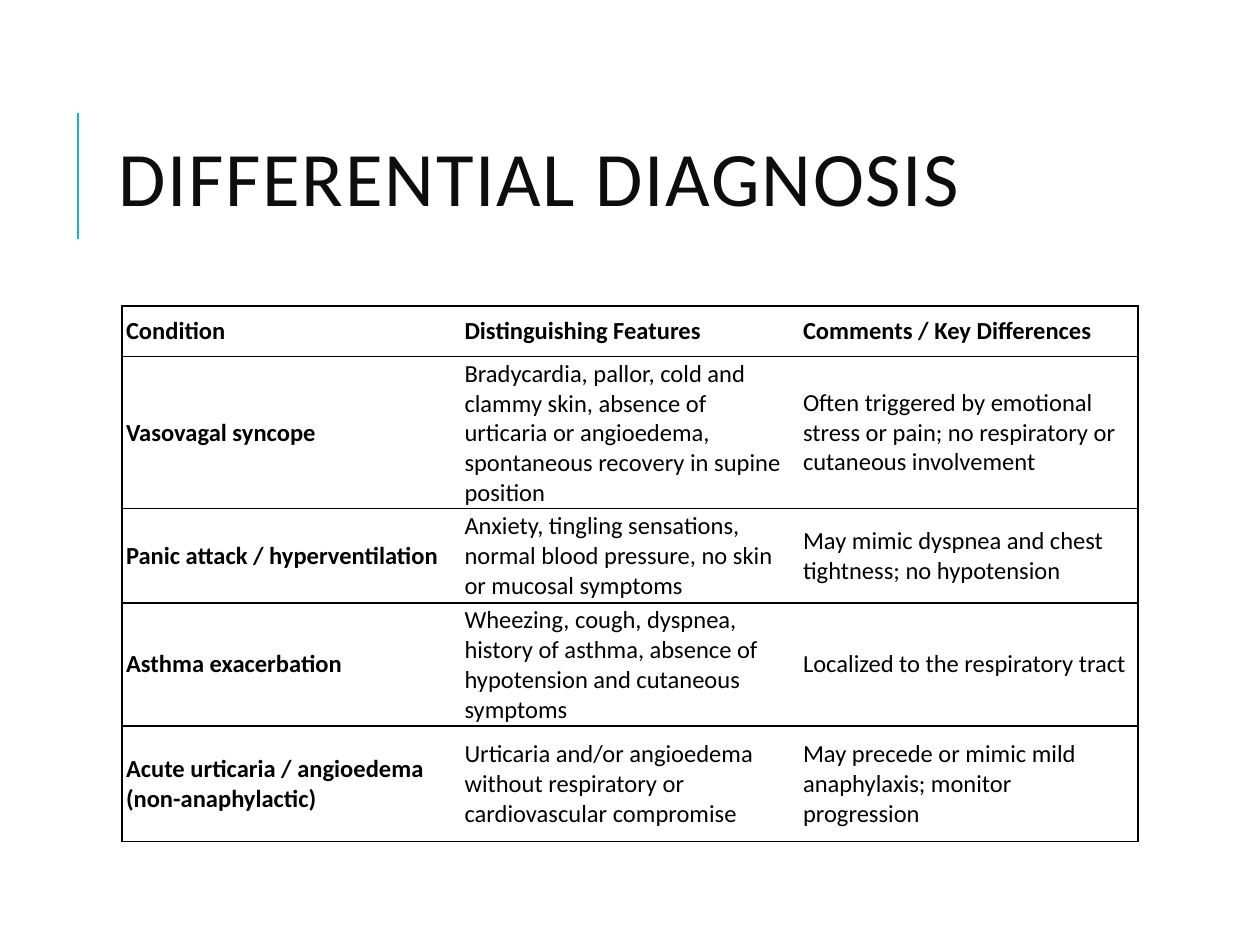
from lxml.etree import SubElement
from pptx import Presentation
from pptx.dml.color import RGBColor
from pptx.enum.shapes import MSO_CONNECTOR
from pptx.enum.text import MSO_ANCHOR
from pptx.oxml.ns import qn
from pptx.util import Inches, Pt

COLORS = {"accent": "1CADE4", "title": "0D0D0D", "ink": "000000", "paper": "FFFFFF"}
FONT = "Calibri"
ROWS = [
    ("Condition", "Distinguishing Features", "Comments / Key Differences"),
    ("Vasovagal syncope",
     "Bradycardia, pallor, cold and clammy skin, absence of urticaria or angioedema, "
     "spontaneous recovery in supine position",
     "Often triggered by emotional stress or pain; no respiratory or cutaneous involvement"),
    ("Panic attack / hyperventilation",
     "Anxiety, tingling sensations, normal blood pressure, no skin or mucosal symptoms",
     "May mimic dyspnea and chest tightness; no hypotension"),
    ("Asthma exacerbation",
     "Wheezing, cough, dyspnea, history of asthma, absence of hypotension and cutaneous symptoms",
     "Localized to the respiratory tract"),
    ("Acute urticaria / angioedema (non-anaphylactic)",
     "Urticaria and/or angioedema without respiratory or cardiovascular compromise",
     "May precede or mimic mild anaphylaxis; monitor progression"),
]
ROW_HEIGHTS = [0.4, 1.1, 0.75, 0.92, 0.92]
TABLE_WIDTH = 8.06


def style_text(para, size, color, bold):
    for span in para.runs:
        span.font.name = FONT
        span.font.size = Pt(size)
        span.font.bold = bold
        span.font.color.rgb = RGBColor.from_string(COLORS[color])


def set_border(cell, side, visible):
    line = SubElement(cell._tc.get_or_add_tcPr(), qn(f"a:ln{side}"), w=str(Pt(1)))
    if visible:
        fill = SubElement(line, qn("a:solidFill"))
        SubElement(fill, qn("a:srgbClr"), val=COLORS["ink"])
    else:
        SubElement(line, qn("a:noFill"))


deck = Presentation()
deck.slide_width = Inches(10)
deck.slide_height = Inches(7.5)
page = deck.slides.add_slide(deck.slide_layouts[6])

rule = page.shapes.add_connector(
    MSO_CONNECTOR.STRAIGHT, Inches(0.62), Inches(1.9), Inches(0.62), Inches(0.9))
rule.line.color.rgb = RGBColor.from_string(COLORS["accent"])
rule.line.width = Pt(1.5)
SubElement(rule._element.spPr, qn("a:effectLst"))

title = page.shapes.add_textbox(Inches(0.84), Inches(0.64), Inches(7.97), Inches(1.64))
title.text_frame.word_wrap = True
title.text_frame.vertical_anchor = MSO_ANCHOR.MIDDLE
heading = title.text_frame.paragraphs[0]
heading.text = "DIFFERENTIAL DIAGNOSIS"
heading.line_spacing = 0.8
style_text(heading, 44, "title", False)
heading.runs[0].font._element.set("spc", "100")

table = page.shapes.add_table(
    len(ROWS), len(ROWS[0]), Inches(0.97), Inches(2.43),
    Inches(TABLE_WIDTH), Inches(sum(ROW_HEIGHTS))).table
table.horz_banding = False
for column in table.columns:
    column.width = Inches(TABLE_WIDTH / len(ROWS[0]))

last_column = len(ROWS[0]) - 1
for row_index, texts in enumerate(ROWS):
    table.rows[row_index].height = Inches(ROW_HEIGHTS[row_index])
    for column_index, text in enumerate(texts):
        cell = table.cell(row_index, column_index)
        cell.text_frame.text = text
        cell.vertical_anchor = MSO_ANCHOR.MIDDLE
        cell.margin_left = Inches(0.03)
        cell.margin_right = Inches(0.05)
        cell.margin_top = cell.margin_bottom = Inches(0.02)
        style_text(cell.text_frame.paragraphs[0], 14, "ink",
                   row_index == 0 or column_index == 0)
        set_border(cell, "L", column_index == 0)
        set_border(cell, "R", column_index == last_column)
        set_border(cell, "T", True)
        set_border(cell, "B", True)
        cell.fill.solid()
        cell.fill.fore_color.rgb = RGBColor.from_string(COLORS["paper"])

deck.save("out.pptx")
